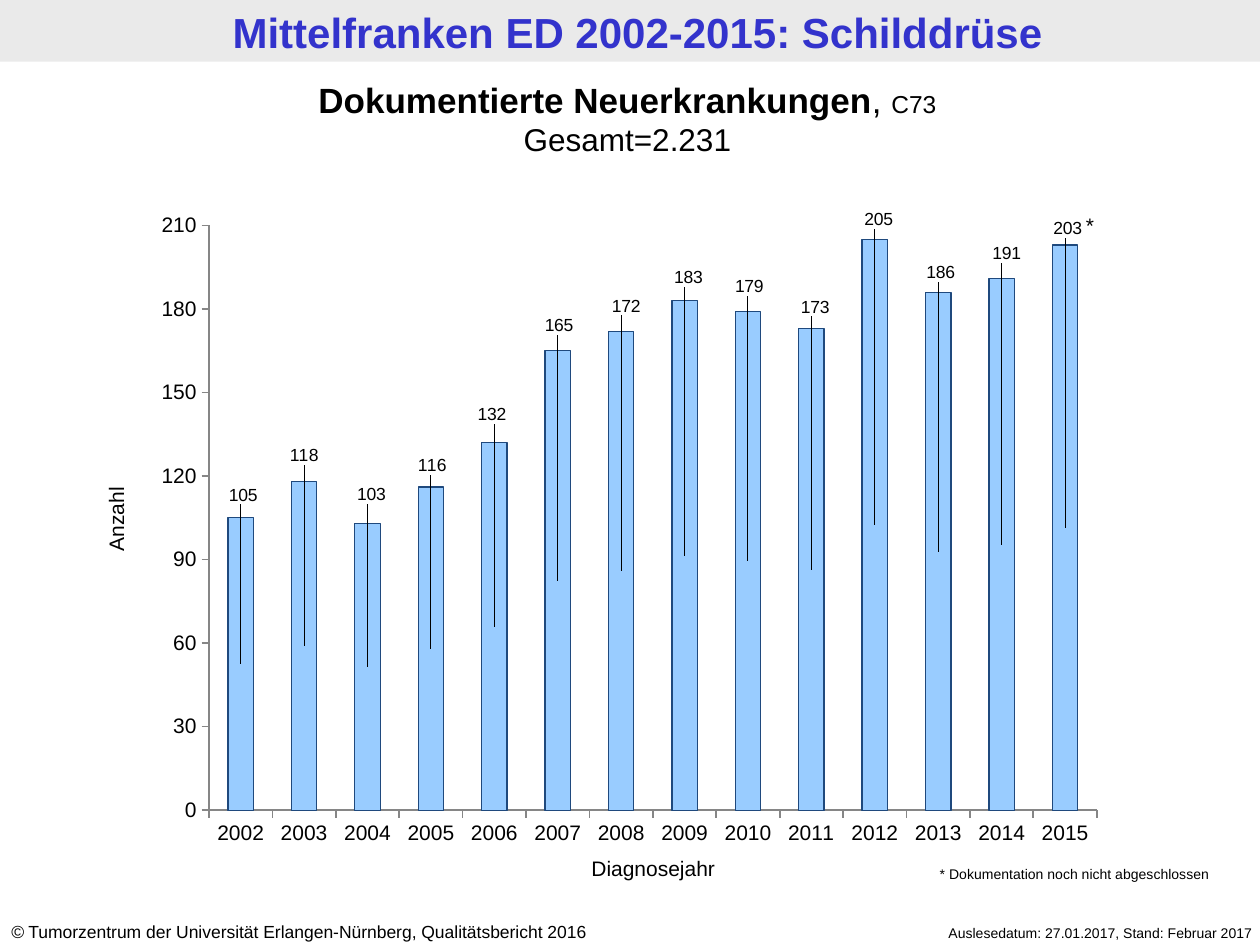
import pptx
import pptx.chart.data
import pptx.dml.color
import pptx.enum.chart
import pptx.enum.shapes
import pptx.enum.text
import pptx.oxml
import pptx.util
from pptx.util import Inches

ALIGN = pptx.enum.text.PP_ALIGN
FIRST_YEAR = 2002
CASES = [105, 118, 103, 116, 132, 165, 172, 183, 179, 173, 205, 186, 191, 203]
AXIS_MAX = 210

# Chart frame in inches, plot area as fractions of it
CHART_BOX = (1.15, 1.64, 7.71, 5.14)
PLOT = {"x": 0.066, "y": 0.029, "w": 0.914, "h": 0.903}

# Label centres in inches: right of the bar centre, above the bar top
LABEL_RIGHT = [0.02, 0, 0.03, 0.01, -0.02, 0.01, 0.04,
               0.03, 0.01, 0.03, 0.03, 0.02, 0.04, 0.02]
LABEL_ABOVE = [0.18, 0.21, 0.23, 0.17, 0.22, 0.2, 0.2,
               0.18, 0.2, 0.17, 0.16, 0.16, 0.2, 0.13]


def color(value):
    return pptx.dml.color.RGBColor.from_string(value)


def manual_layout(inner=False, **fractions):
    """Build a c:layout element from fractions of the chart size."""
    modes = ('<c:layoutTarget val="inner"/><c:xMode val="edge"/>'
             '<c:yMode val="edge"/>') if inner else ""
    values = "".join(f'<c:{name} val="{value:.4f}"/>'
                     for name, value in fractions.items())
    return pptx.oxml.parse_xml(
        '<c:layout xmlns:c="http://schemas.openxmlformats.org/drawingml/2006/chart">'
        f"<c:manualLayout>{modes}{values}</c:manualLayout></c:layout>")


class SlideBuilder:
    font = "Arial"
    ink = "000000"
    title_ink = "3333CC"
    band = "EAEAEA"
    bar_fill = "99CCFF"
    bar_line = "1F497D"
    axis_line = "868686"

    def __init__(self, slide):
        self.slide = slide

    def style(self, font, size, ink=None, bold=False, italic=False):
        font.name = self.font
        font.size = pptx.util.Pt(size)
        font.bold = bold
        font.italic = italic
        font.color.rgb = color(ink or self.ink)

    def title(self, text, box):
        title = self.slide.shapes.title
        title.left, title.top, title.width, title.height = map(Inches, box)
        frame = title.text_frame
        frame.text = text
        frame.word_wrap = True
        frame.vertical_anchor = pptx.enum.text.MSO_ANCHOR.TOP
        frame.margin_left = frame.margin_right = Inches(0.09)
        frame.margin_top = frame.margin_bottom = Inches(0.04)
        paragraph = frame.paragraphs[0]
        paragraph.alignment = ALIGN.CENTER
        self.style(paragraph.runs[0].font, 24, self.title_ink, bold=True)

    def title_band(self, box):
        shape = self.slide.shapes.add_shape(
            pptx.enum.shapes.MSO_SHAPE.RECTANGLE, *map(Inches, box))
        shape.shadow.inherit = False
        shape.fill.solid()
        shape.fill.fore_color.rgb = color(self.band)
        shape.line.fill.background()
        self.slide.shapes.title.element.addprevious(shape.element)

    def text(self, box, *lines, align=ALIGN.LEFT, rotation=0):
        """Each line is a list of (text, size, optional font settings)."""
        shape = self.slide.shapes.add_textbox(*map(Inches, box))
        shape.rotation = rotation
        frame = shape.text_frame
        frame.word_wrap = True
        frame.auto_size = pptx.enum.text.MSO_AUTO_SIZE.SHAPE_TO_FIT_TEXT
        for index, line in enumerate(lines):
            paragraph = frame.add_paragraph() if index else frame.paragraphs[0]
            paragraph.alignment = align
            for text, size, *settings in line:
                run = paragraph.add_run()
                run.text = text
                self.style(run.font, size, **(settings[0] if settings else {}))

    def axis(self, axis):
        axis.has_major_gridlines = False
        axis.major_tick_mark = pptx.enum.chart.XL_TICK_MARK.OUTSIDE
        axis.minor_tick_mark = pptx.enum.chart.XL_TICK_MARK.NONE
        axis.format.line.color.rgb = color(self.axis_line)
        axis.format.line.width = pptx.util.Pt(1)
        self.style(axis.tick_labels.font, 12)

    def column_chart(self, box, categories, values):
        data = pptx.chart.data.CategoryChartData()
        data.categories = categories
        data.add_series("Series 1", values)
        chart = self.slide.shapes.add_chart(
            pptx.enum.chart.XL_CHART_TYPE.COLUMN_STACKED,
            *map(Inches, box), data).chart
        chart.has_title = False
        chart.has_legend = False
        self.style(chart.font, 12)

        # Axes
        self.axis(chart.category_axis)
        self.axis(chart.value_axis)
        chart.value_axis.minimum_scale = 0
        chart.value_axis.maximum_scale = AXIS_MAX
        chart.value_axis.major_unit = 30

        # Plot area and bars
        plot = chart.plots[0]
        plot.gap_width = 150
        plot.overlap = 100
        plot.vary_by_categories = False
        plot_area = chart.element.chart.plotArea
        for layout in plot_area.xpath("c:layout"):
            plot_area.remove(layout)
        plot_area.insert(0, manual_layout(inner=True, **PLOT))
        series = plot.series[0]
        series.format.fill.solid()
        series.format.fill.fore_color.rgb = color(self.bar_fill)
        series.format.line.color.rgb = color(self.bar_line)
        series.format.line.width = pptx.util.Pt(0.75)

        # Value labels, moved from the bar centre to above the bar
        labels = series.data_labels
        labels.show_value = True
        self.style(labels.font, 10)
        for index, value in enumerate(values):
            label = series.points[index].data_label
            self.style(label.font, 10)
            label.position = pptx.enum.chart.XL_LABEL_POSITION.CENTER
            half_bar = PLOT["h"] * value / AXIS_MAX / 2
            layout = manual_layout(x=LABEL_RIGHT[index] / box[2],
                                   y=-half_bar - LABEL_ABOVE[index] / box[3])
            index_element = labels._element.xpath(
                f'c:dLbl/c:idx[@val="{index}"]')[0]
            index_element.addnext(layout)


def main():
    presentation = pptx.Presentation()
    presentation.slide_width = Inches(10)
    presentation.slide_height = Inches(7.5)
    slide = presentation.slides.add_slide(presentation.slide_layouts[5])
    builder = SlideBuilder(slide)

    # Header
    builder.title("Mittelfranken ED 2002-2015: Schilddrüse", (0.06, 0.01, 10, 0.49))
    builder.title_band((0, 0, 10, 0.49))

    # Footer
    builder.text((-0.01, 7.26, 5.24, 0.27),
                 [("©", 10, {"italic": True}),
                  (" Tumorzentrum der Universität Erlangen-Nürnberg, "
                   "Qualitätsbericht 2016", 10)])
    builder.text((6.65, 7.29, 3.39, 0.24),
                 [("Auslesedatum: 27.01.2017, Stand: Februar 2017", 8)],
                 align=ALIGN.RIGHT)

    # Chart with its heading, axis titles and footnote
    years = [str(FIRST_YEAR + index) for index in range(len(CASES))]
    builder.column_chart(CHART_BOX, years, CASES)
    builder.text((-0.04, 0.57, 10.04, 0.74),
                 [("Dokumentierte Neuerkrankungen", 20, {"bold": True}),
                  (", ", 20), ("C73", 14)],
                 [("Gesamt=2.231", 18)], align=ALIGN.CENTER)
    builder.text((4.06, 6.74, 2.25, 0.3), [("Diagnosejahr", 12)],
                 align=ALIGN.CENTER)
    builder.text((0.31, 3.97, 1.22, 0.3), [("Anzahl", 12)],
                 align=ALIGN.CENTER, rotation=270)
    builder.text((8.39, 1.64, 0.39, 0.3), [("*", 12)], align=ALIGN.RIGHT)
    builder.text((7.36, 6.82, 2.48, 0.24),
                 [("* Dokumentation noch nicht abgeschlossen", 8)])

    presentation.save("out.pptx")


if __name__ == "__main__":
    main()
